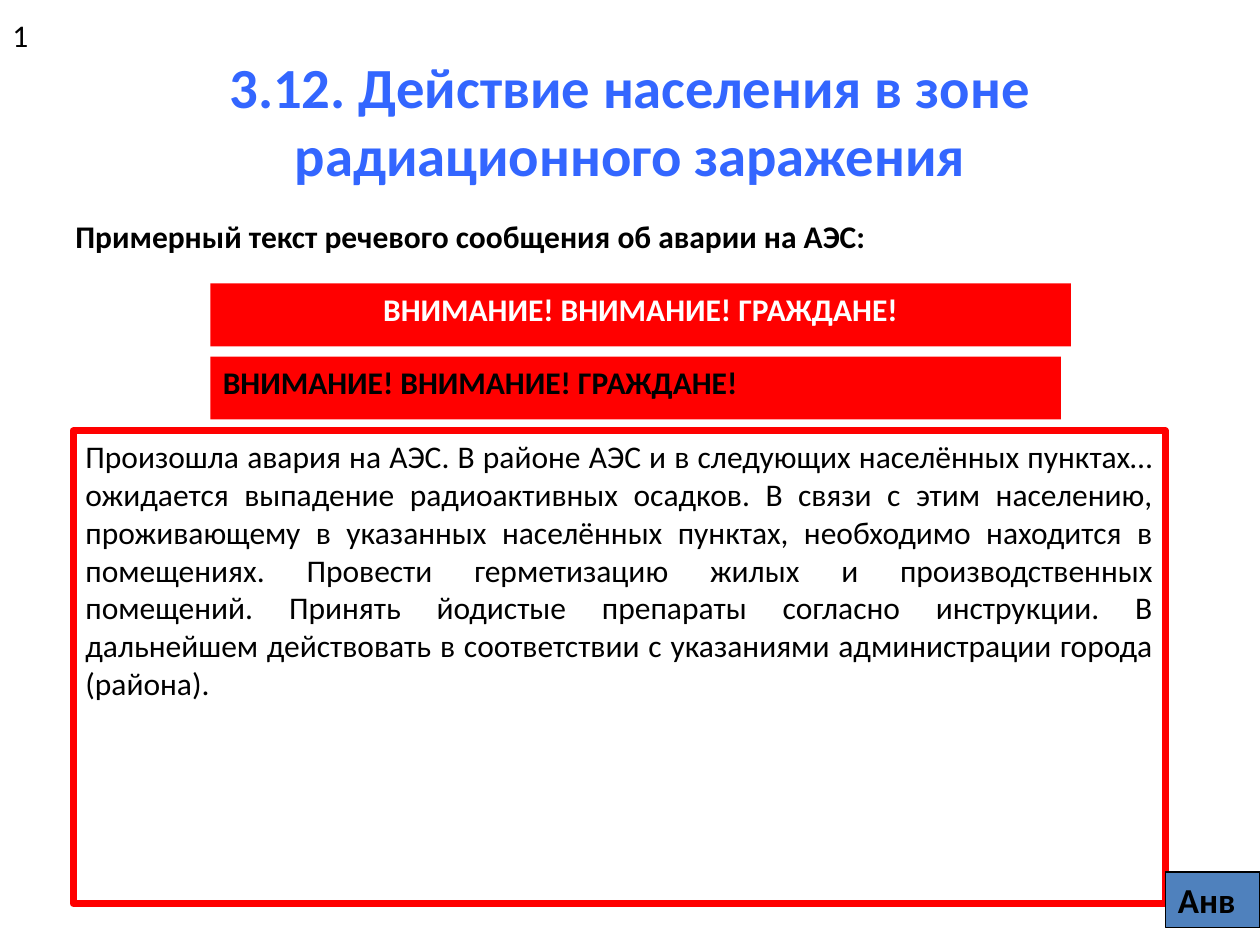
from dataclasses import dataclass
from typing import Optional

import pptx
import pptx.dml.color
import pptx.enum.shapes
import pptx.enum.text
import pptx.util

Inches = pptx.util.Inches
Align = pptx.enum.text.PP_ALIGN
Anchor = pptx.enum.text.MSO_ANCHOR


@dataclass(frozen=True)
class Theme:
    font: str = "Calibri"
    title_color: str = "3366FF"
    alert: str = "FF0000"
    badge: str = "4F81BD"
    dark: str = "000000"
    light: str = "FFFFFF"
    title_size: float = 32.4
    body_size: float = 18
    badge_size: float = 20


THEME = Theme()


@dataclass(frozen=True)
class Block:
    """A text block; one with a fill or line is drawn as a rectangle."""
    text: str
    left: float
    top: float
    width: float
    height: float
    size: float = THEME.body_size
    color: str = THEME.dark
    bold: bool = True
    align: Align = Align.LEFT
    fill: Optional[str] = None
    line: Optional[str] = None
    line_width: float = 0.75


def rgb(color: str) -> pptx.dml.color.RGBColor:
    return pptx.dml.color.RGBColor.from_string(color)


def write_text(tf, text: str, *, size: float = THEME.body_size,
               color: str = THEME.dark, bold: bool = False,
               align: Align = Align.LEFT, anchor: Anchor = Anchor.TOP) -> None:
    tf.word_wrap = True
    tf.auto_size = pptx.enum.text.MSO_AUTO_SIZE.NONE
    tf.vertical_anchor = anchor
    p = tf.paragraphs[0]
    p.alignment = align
    r = p.add_run()
    r.text = text
    r.font.name = THEME.font
    r.font.size = pptx.util.Pt(size)
    r.font.bold = bold
    r.font.color.rgb = rgb(color)


def draw_block(slide, block: Block) -> None:
    box = [Inches(v) for v in (block.left, block.top, block.width, block.height)]
    if block.fill or block.line:
        sp = slide.shapes.add_shape(pptx.enum.shapes.MSO_SHAPE.RECTANGLE, *box)
        sp.shadow.inherit = False
        if block.fill:
            sp.fill.solid()
            sp.fill.fore_color.rgb = rgb(block.fill)
        else:
            sp.fill.background()
        if block.line:
            sp.line.color.rgb = rgb(block.line)
            sp.line.width = pptx.util.Pt(block.line_width)
        else:
            sp.line.fill.background()
    else:
        sp = slide.shapes.add_textbox(*box)
    write_text(sp.text_frame, block.text, size=block.size, color=block.color,
               bold=block.bold, align=block.align)


TITLE = "3.12. Действие населения в зоне радиационного заражения"
ALERT = "ВНИМАНИЕ! ВНИМАНИЕ! ГРАЖДАНЕ!"
MESSAGE = (
    "Произошла авария на АЭС. В районе АЭС и в следующих населённых пунктах… "
    "ожидается выпадение радиоактивных осадков. В связи с этим населению, "
    "проживающему в указанных населённых пунктах, необходимо находится в "
    "помещениях. Провести герметизацию жилых и производственных помещений. "
    "Принять йодистые препараты согласно инструкции. В дальнейшем действовать "
    "в соответствии с указаниями администрации города (района)."
)

BLOCKS = [
    # Introduction
    Block("Примерный текст речевого сообщения об аварии на АЭС:",
          0.5, 1.67, 9.08, 0.5),
    # Alert banners
    Block(ALERT, 1.67, 2.25, 6.83, 0.5, color=THEME.light,
          align=Align.CENTER, fill=THEME.alert),
    Block(ALERT, 1.67, 2.83, 6.75, 0.5, fill=THEME.alert),
    # Framed message
    Block(MESSAGE, 0.58, 3.42, 8.67, 3.75, bold=False,
          align=Align.JUSTIFY, line=THEME.alert, line_width=4),
    # Page number and corner badge
    Block("1", 0, 0.08, 0.5, 0.5, bold=False),
    Block("Анв", 9.25, 6.92, 0.75, 0.44, size=THEME.badge_size,
          fill=THEME.badge, line=THEME.dark),
]


def main() -> None:
    prs = pptx.Presentation()
    prs.slide_width, prs.slide_height = Inches(10), Inches(7.5)
    slide = prs.slides.add_slide(prs.slide_layouts.get_by_name("Title Only"))

    # Title
    title = slide.shapes.title
    title.left, title.top = Inches(0.75), Inches(0.33)
    title.width, title.height = Inches(8.5), Inches(1.25)
    write_text(title.text_frame, TITLE, size=THEME.title_size,
               color=THEME.title_color, bold=True, align=Align.CENTER,
               anchor=Anchor.MIDDLE)

    # Body
    for block in BLOCKS:
        draw_block(slide, block)

    prs.save("out.pptx")


if __name__ == "__main__":
    main()
